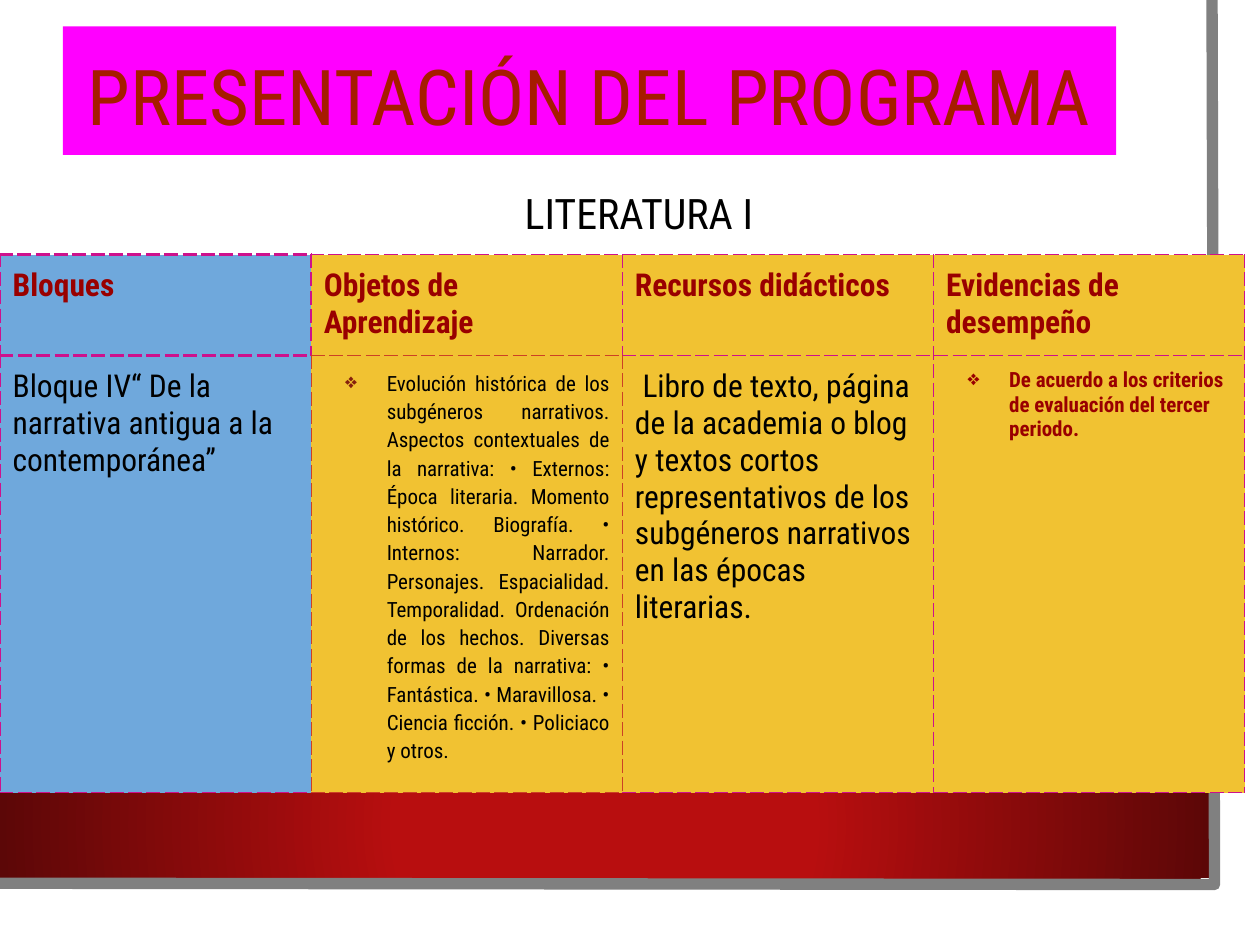
from lxml import etree
from pptx import Presentation
from pptx import util as u
from pptx.dml.color import RGBColor
from pptx.enum import shapes, text
from pptx.oxml import ns

FONT = "Roboto Condensed"
PINK, RUST, MAROON = "CD118C", "CC4125", "990000"
BLUE, GOLD = "6FA8DC", "F1C232"


def color(value):
    return RGBColor.from_string(value)


def add_run(paragraph, words, size, ink, bold=False):
    run = paragraph.add_run()
    run.text = words
    run.font.name = FONT
    run.font.size = u.Pt(size)
    run.font.bold = bold
    run.font.color.rgb = color(ink)


presentation = Presentation()
presentation.slide_width = u.Inches(10)
presentation.slide_height = u.Inches(7.5)
slide = presentation.slides.add_slide(presentation.slide_layouts[6])

# White sheet, red band and title panel
panels = []
for left, top, width, height, fill in (
    (0, 0, 9.83, 7.27, "FFFFFF"),
    (0, 6.12, 9.6, 0.85, "B80E0F"),
    (0.5, 0.21, 8.36, 1.02, "FF00FF"),
):
    panel = slide.shapes.add_shape(
        shapes.MSO_SHAPE.RECTANGLE,
        u.Inches(left), u.Inches(top), u.Inches(width), u.Inches(height))
    panel.shadow.inherit = False
    panel.fill.solid()
    panel.fill.fore_color.rgb = color(fill)
    panel.line.fill.background()
    panels.append(panel)
sheet, band, title = panels

# Radial gradient of the band
band.fill.gradient()
for stop, position, shade in zip(
        band.fill.gradient_stops, (0.34, 1), ("B80E0F", "5C0707")):
    stop.position = position
    stop.color.rgb = color(shade)
gradient = band.fill._xPr.find(ns.qn("a:gradFill"))
gradient.remove(gradient.find(ns.qn("a:lin")))
radial = etree.SubElement(gradient, ns.qn("a:path"), path="circle")
etree.SubElement(radial, ns.qn("a:fillToRect"),
                 l="50000", t="50000", r="50000", b="50000")

# Grey edge of the sheet
builder = slide.shapes.build_freeform(
    u.Inches(9.62), u.Inches(0), scale=1.0)
builder.add_line_segments(
    [(u.Inches(9.64), u.Inches(7.02)), (u.Inches(-0.02), u.Inches(7.01))],
    close=False)
edge = builder.convert_to_shape()
edge.shadow.inherit = False
edge.fill.background()
edge.line.color.rgb = color("808080")
edge.line.width = u.Pt(6.5)

# Title and subtitle
subtitle = slide.shapes.add_textbox(
    u.Inches(0), u.Inches(1.31), u.Inches(9.77), u.Inches(0.7))
for shape, anchor, inset, spacing, words, size, ink in (
    (title, text.MSO_ANCHOR.BOTTOM, 0.1, 0.9,
     "PRESENTACIÓN DEL PROGRAMA", 44, "A61C00"),
    (subtitle, text.MSO_ANCHOR.TOP, 0.47, 1.2, "LITERATURA I", 24, "000000"),
):
    frame = shape.text_frame
    frame.word_wrap = True
    frame.vertical_anchor = anchor
    frame.margin_left = u.Inches(inset)
    frame.margin_right = frame.margin_top = frame.margin_bottom = u.Inches(0.1)
    paragraph = frame.paragraphs[0]
    paragraph.alignment = text.PP_ALIGN.CENTER
    paragraph.line_spacing = spacing
    add_run(paragraph, words, size, ink)

# Programme table
headings = ("Bloques", "Objetos de Aprendizaje", "Recursos didácticos",
            "Evidencias de desempeño")
# Words, size, colour, bold, bullet colour, first-line indent
details = (
    ("Bloque IV“ De la narrativa antigua a la contemporánea”",
     18, "000000", False, None, 0),
    ("Evolución histórica de los subgéneros narrativos. Aspectos contextuales "
     "de la narrativa: • Externos: Época literaria. Momento histórico. "
     "Biografía. • Internos: Narrador. Personajes. Espacialidad. "
     "Temporalidad. Ordenación de los hechos. Diversas formas de la "
     "narrativa: • Fantástica. • Maravillosa. • Ciencia ficción. "
     "• Policiaco y otros.",
     12, "000000", False, "85200C", -0.33),
    ("Libro de texto, página de la academia o blog y textos cortos "
     "representativos de los subgéneros narrativos en las épocas literarias.",
     18, "000000", False, None, 0.06),
    ("De acuerdo a los criterios de evaluación del tercer periodo.",
     12, MAROON, True, MAROON, -0.33),
)
rows = ([(words, 18, MAROON, True, None, 0) for words in headings], details)

# Borders that differ from thin pink, by row and column
thick, rust = (PINK, 1.5), (RUST, 0.75)
special_borders = {
    (0, 0): dict.fromkeys("LRTB", thick),
    (0, 1): {"L": thick, "B": rust},
    (1, 0): {"T": thick, "R": rust},
    (1, 1): dict.fromkeys("LRTB", rust),
    (1, 2): {"L": rust},
}

graphic = slide.shapes.add_table(
    2, 4, u.Inches(0), u.Inches(2.02), u.Inches(9.87), u.Inches(4.18))
table = graphic.table
for column in table.columns:
    column.width = u.Inches(2.47)
for row, height in zip(table.rows, (0.71, 3.47)):
    row.height = u.Inches(height)

for row_index, entries in enumerate(rows):
    for column_index, entry in enumerate(entries):
        words, size, ink, bold, bullet, indent = entry
        cell = table.cell(row_index, column_index)
        cell.margin_left = cell.margin_right = u.Inches(0.1)
        cell.margin_top = cell.margin_bottom = u.Inches(0.1)

        # Dashed borders come before the fill in the cell properties
        properties = cell._tc.get_or_add_tcPr()
        borders = special_borders.get((row_index, column_index), {})
        for side in "LRTB":
            ink_line, weight = borders.get(side, (PINK, 0.75))
            line = etree.SubElement(properties, ns.qn(f"a:ln{side}"),
                                    w=str(u.Pt(weight)))
            solid = etree.SubElement(line, ns.qn("a:solidFill"))
            etree.SubElement(solid, ns.qn("a:srgbClr"), val=ink_line)
            etree.SubElement(line, ns.qn("a:prstDash"), val="dash")
        cell.fill.solid()
        cell.fill.fore_color.rgb = color(GOLD if column_index else BLUE)

        paragraph = cell.text_frame.paragraphs[0]
        settings = paragraph._p.get_or_add_pPr()
        settings.set("indent", str(u.Inches(indent)))
        if bullet:
            settings.set("marL", str(u.Inches(0.5)))
            tint = etree.SubElement(settings, ns.qn("a:buClr"))
            etree.SubElement(tint, ns.qn("a:srgbClr"), val=bullet)
            etree.SubElement(settings, ns.qn("a:buChar"), char="❖")
        add_run(paragraph, words, size, ink, bold)

objectives = table.cell(1, 1).text_frame.paragraphs[0]
objectives.alignment = text.PP_ALIGN.JUSTIFY
objectives.line_spacing = 1.15

presentation.save("out.pptx")
